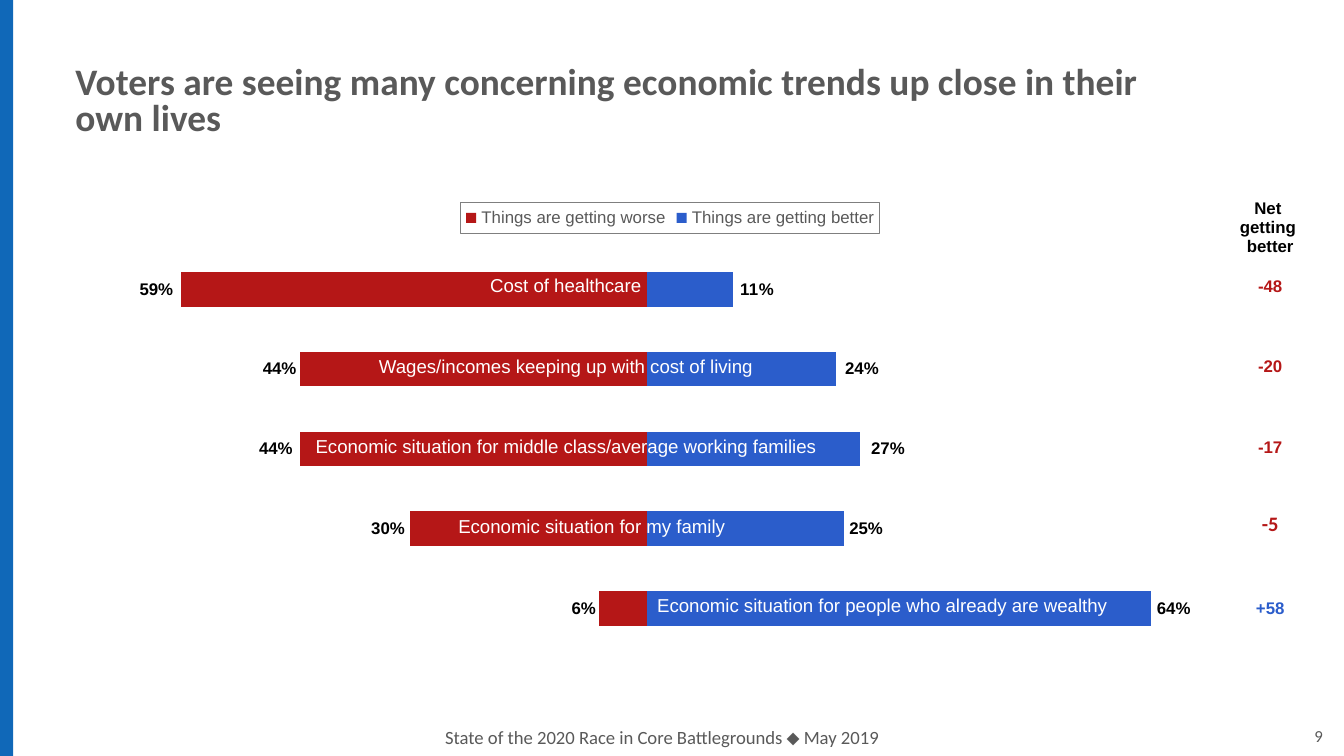
"""Build the slide on how voters see economic trends in their own lives."""
from pptx import Presentation
from pptx.chart.data import CategoryChartData
from pptx.dml.color import RGBColor
from pptx.enum.chart import XL_CHART_TYPE, XL_LABEL_POSITION, XL_LEGEND_POSITION
from pptx.enum.shapes import MSO_SHAPE
from pptx.enum.text import MSO_ANCHOR, MSO_AUTO_SIZE, PP_ALIGN
from pptx.oxml import parse_xml
from pptx.oxml.ns import nsdecls, qn
from pptx.util import Cm, Pt

GRAY = RGBColor(0x59, 0x59, 0x59)
BORDER_GRAY = RGBColor(0x7F, 0x7F, 0x7F)
BLACK = RGBColor(0x00, 0x00, 0x00)
WHITE = RGBColor(0xFF, 0xFF, 0xFF)
RED = RGBColor(0xB5, 0x17, 0x17)
BLUE = RGBColor(0x2B, 0x5D, 0xCB)
STRIPE_BLUE = RGBColor(0x10, 0x68, 0xB8)


def write(paragraph, text, size, color, font="Arial", bold=False, align=PP_ALIGN.CENTER):
    paragraph.alignment = align
    for index, line in enumerate(text.split("\n")):
        if index:
            paragraph.add_line_break()
        run = paragraph.add_run()
        run.text = line
        run.font.name = font
        run.font.size = Pt(size)
        run.font.bold = bold
        run.font.color.rgb = color


def add_column(left, top, width, heights, anchor):
    frame = slide.shapes.add_table(len(heights), 1, left, top, width, sum(heights))
    table = frame.table
    table.first_row = False
    table.horz_banding = False
    for row, height in zip(table.rows, heights):
        row.height = height
        cell = row.cells[0]
        cell.fill.background()
        cell.vertical_anchor = anchor
        cell.margin_left = cell.margin_right = Cm(0.18)
        cell.margin_top = cell.margin_bottom = 0
        for index, side in enumerate(("lnL", "lnR", "lnT", "lnB")):
            cell._tc.get_or_add_tcPr().insert(index, parse_xml(
                f'<a:{side} {nsdecls("a")} w="0"><a:noFill/></a:{side}>'))
        paragraph = cell.text_frame.paragraphs[0]
        paragraph.space_before = paragraph.space_after = Pt(1.5)
    return [row.cells[0] for row in table.rows]


presentation = Presentation()
presentation.slide_width = Cm(25.4)
presentation.slide_height = Cm(14.29)
slide = presentation.slides.add_slide(presentation.slide_layouts[5])

stripe = slide.shapes.add_shape(MSO_SHAPE.RECTANGLE, 0, 0, Cm(0.25), presentation.slide_height)
stripe.shadow.inherit = False
stripe.fill.solid()
stripe.fill.fore_color.rgb = STRIPE_BLUE
stripe.line.fill.background()

title = slide.shapes.title
title.left, title.top, title.width, title.height = Cm(1.17), Cm(0.75), Cm(21.16), Cm(2.39)
title.text_frame.word_wrap = True
title.text_frame.auto_size = MSO_AUTO_SIZE.NONE
title.text_frame.vertical_anchor = MSO_ANCHOR.MIDDLE
paragraph = title.text_frame.paragraphs[0]
paragraph.line_spacing = 0.8
write(paragraph, "Voters are seeing many concerning economic trends up close in their own lives",
      20, GRAY, "Calibri", True, PP_ALIGN.LEFT)

for text, left, width, size, align in (
    ("State of the 2020 Race in Core Battlegrounds ⬥ May 2019", 4.19, 16.64, 10, PP_ALIGN.CENTER),
    ("9", 23.62, 1.63, 9, PP_ALIGN.RIGHT),
):
    text_box = slide.shapes.add_textbox(Cm(left), Cm(13.59), Cm(width), Cm(0.66))
    text_box.text_frame.word_wrap = True
    write(text_box.text_frame.paragraphs[0], text, size, GRAY, "Calibri", align=align)

all_series = (
    ("Things are getting worse", (-0.06, -0.3, -0.44, -0.44, -0.59), RED,
     XL_LABEL_POSITION.INSIDE_BASE, "#%;#%;0", (-3.7, -19.2, -28.3, -28, -38)),
    ("Things are getting better", (0.64, 0.25, 0.27, 0.24, 0.11), BLUE,
     XL_LABEL_POSITION.INSIDE_END, "0%", (3.6, 3.6, 4.1, 3.9, 3.7)),
)
chart_data = CategoryChartData(number_format="0%")
chart_data.categories = ["1", "2", "3", "4", "5"]
for name, values, *_ in all_series:
    chart_data.add_series(name, values)
chart = slide.shapes.add_chart(XL_CHART_TYPE.BAR_STACKED, Cm(1.02), Cm(3.65), Cm(23.29), Cm(8.61),
                               chart_data).chart
chart.has_title = False
chart.font.name = "Arial"
chart.font.size = Pt(18)
chart.font.color.rgb = BLACK
chart.category_axis.visible = False
chart.value_axis.visible = False
chart.value_axis.has_major_gridlines = False
chart.value_axis.minimum_scale = -0.7
chart.value_axis.maximum_scale = 0.7
chart.value_axis.tick_labels.number_format = "0%"
chart.value_axis.tick_labels.number_format_is_linked = False

chart.has_legend = True
legend = chart.legend
legend.position = XL_LEGEND_POSITION.TOP
legend.include_in_layout = False
legend.font.size = Pt(9)
legend.font.color.rgb = GRAY
legend._element.find(qn("c:txPr")).addprevious(parse_xml(
    f'<c:spPr {nsdecls("c", "a")}><a:ln w="6350"><a:solidFill><a:srgbClr val="{BORDER_GRAY}"/>'
    '</a:solidFill></a:ln></c:spPr>'))

plot_area = chart._chartSpace.chart.plotArea
for layout in plot_area.findall(qn("c:layout")):
    plot_area.remove(layout)
plot_area.insert(0, parse_xml(
    f'<c:layout {nsdecls("c")}><c:manualLayout><c:layoutTarget val="inner"/>'
    '<c:xMode val="edge"/><c:yMode val="edge"/><c:x val="0.033"/><c:y val="0.124"/>'
    '<c:w val="0.896"/><c:h val="0.876"/></c:manualLayout></c:layout>'))

plot = chart.plots[0]
plot.gap_width = 131
plot.overlap = 100
plot.vary_by_categories = False
for series, (_, _, color, position, number_format, offsets) in zip(plot.series, all_series):
    series.invert_if_negative = False
    series.format.fill.solid()
    series.format.fill.fore_color.rgb = color
    labels = series.data_labels
    labels.show_value = True
    labels.number_format = number_format
    labels.number_format_is_linked = False
    labels.position = position
    for index, offset in enumerate(offsets):
        label = series.points[index].data_label
        label.font.size = Pt(9)
        label.font.bold = True
        label.font.color.rgb = BLACK
        label.position = position
        label_index = labels._element.findall(qn("c:dLbl"))[index].find(qn("c:idx"))
        label_index.addnext(parse_xml(
            f'<c:numFmt {nsdecls("c")} formatCode="{number_format}" sourceLinked="0"/>'))
        label_index.addnext(parse_xml(
            f'<c:layout {nsdecls("c")}><c:manualLayout><c:x val="{offset / 100:.3f}"/>'
            '<c:y val="0"/></c:manualLayout></c:layout>'))
    labels.font.size = Pt(9)
    labels.font.bold = True
    labels.font.color.rgb = BLACK
    for leader_lines in labels._element.findall(qn("c:showLeaderLines")):
        leader_lines.set("val", "0")
    labels._element.append(parse_xml(
        f'<c:extLst {nsdecls("c")}><c:ext uri="{{CE6537A1-D6FC-4f65-9D91-7224C49458BB}}" '
        'xmlns:c15="http://schemas.microsoft.com/office/drawing/2012/chart">'
        '<c15:showLeaderLines val="0"/></c:ext></c:extLst>'))

topics = (
    "Cost of healthcare",
    "Wages/incomes keeping up with cost of living",
    "Economic situation for middle class/average working families",
    "Economic situation for my family",
)
topic_cells = add_column(Cm(4.52), Cm(4.65), Cm(12.34), [Cm(1.52)] * 4, MSO_ANCHOR.MIDDLE)
for cell, topic in zip(topic_cells, topics):
    write(cell.text_frame.paragraphs[0], topic, 10, WHITE)
topic_cells[-1].margin_left = Cm(1.16)

net_values = (
    ("Net \ngetting \nbetter", 9, BLACK, "Arial"),
    ("-48", 9, RED, "Arial"),
    ("-20", 9, RED, "Arial"),
    ("-17", 9, RED, "Arial"),
    ("-5", 11, RED, "Calibri"),
    ("+58", 9, BLUE, "Arial"),
)
net_heights = [Cm(0.97), Cm(0.76)] + [Cm(1.52)] * 4
net_cells = add_column(Cm(22.86), Cm(3.69), Cm(2.29), net_heights, MSO_ANCHOR.BOTTOM)
for cell, (text, size, color, font) in zip(net_cells, net_values):
    write(cell.text_frame.paragraphs[0], text, size, color, font, True)

wealthy_cell, = add_column(Cm(12.24), Cm(10.5), Cm(9.7), [Cm(1.9)], MSO_ANCHOR.MIDDLE)
write(wealthy_cell.text_frame.paragraphs[0],
      "Economic situation for people who already are wealthy", 10, WHITE, align=PP_ALIGN.LEFT)

presentation.save("out.pptx")
